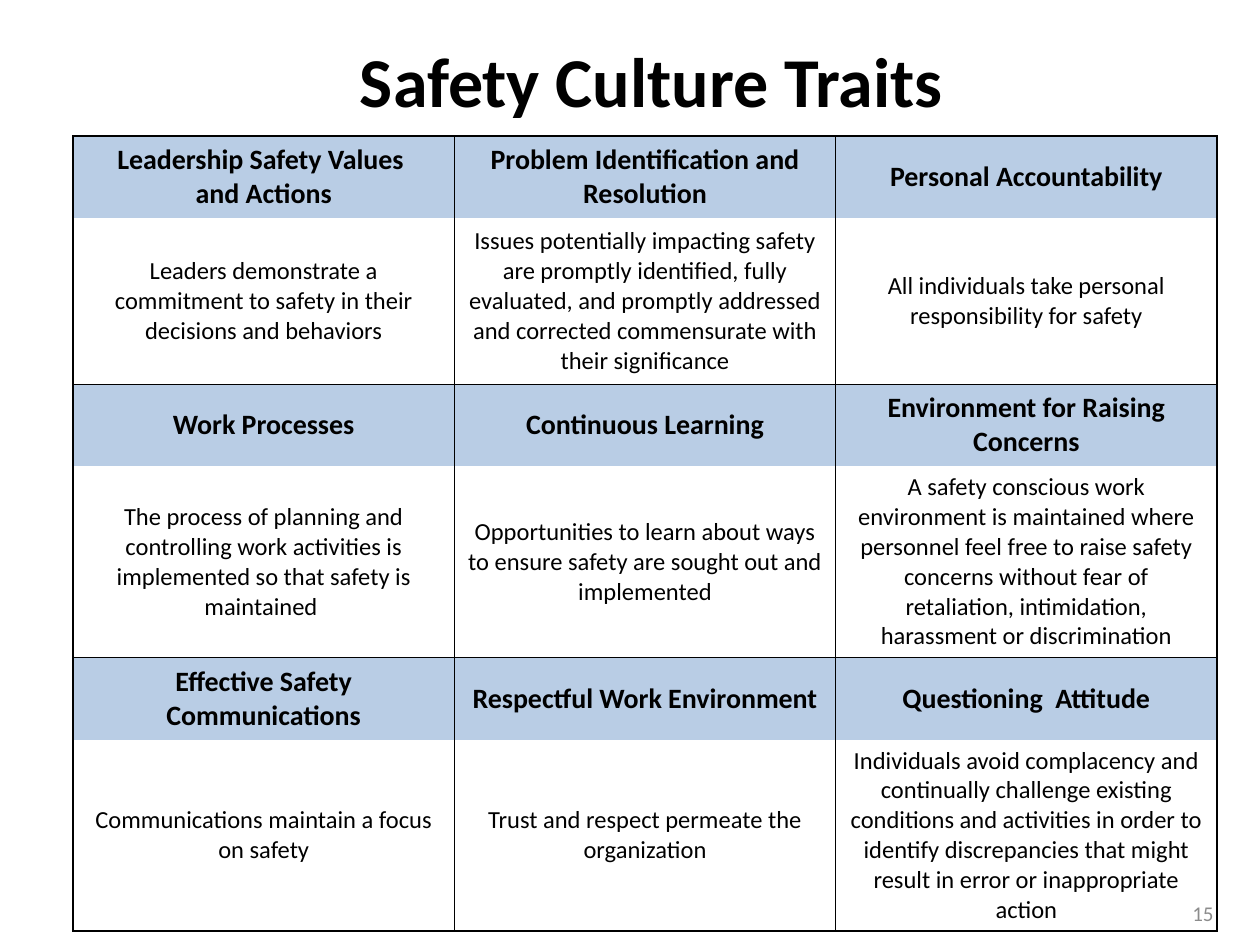
"""Build the Safety Culture Traits slide."""
from lxml import etree
from pptx import Presentation
from pptx.dml.color import RGBColor
from pptx.enum import text as t
from pptx.oxml import ns
from pptx.util import Inches, Pt

BLACK = RGBColor(0, 0, 0)
GRAY = RGBColor(0x8C, 0x8C, 0x8C)
BLUE = RGBColor(0xB9, 0xCD, 0xE5)
CENTER, RIGHT = t.PP_ALIGN.CENTER, t.PP_ALIGN.RIGHT
MIDDLE, TOP = t.MSO_ANCHOR.MIDDLE, t.MSO_ANCHOR.TOP


def write(frame, lines, size, bold=False, color=BLACK, align=CENTER):
    frame.word_wrap = True
    for i, line in enumerate(lines.split("\n")):
        para = frame.add_paragraph() if i else frame.paragraphs[0]
        para.alignment = align
        run = para.add_run()
        run.text = line
        run.font.name = "Calibri"
        run.font.size = Pt(size)
        run.font.bold = bold
        run.font.color.rgb = color


def edge(cell, sides):
    props = cell._tc.get_or_add_tcPr()
    for i, side in enumerate("LRTB"):
        line = etree.Element(ns.qn("a:ln" + side), w=str(Pt(1)))
        if side in sides:
            fill = etree.SubElement(line, ns.qn("a:solidFill"))
            etree.SubElement(fill, ns.qn("a:srgbClr"), val=str(BLACK))
        else:
            etree.SubElement(line, ns.qn("a:noFill"))
        props.insert(i, line)


traits = [
    [("Leadership Safety Values \nand Actions",
      "Leaders demonstrate a commitment to safety in their decisions and behaviors"),
     ("Problem Identification and Resolution",
      "Issues potentially impacting safety are promptly identified, fully evaluated, "
      "and promptly addressed and corrected commensurate with their significance"),
     ("Personal Accountability",
      "All individuals take personal responsibility for safety")],
    [("Work Processes",
      "The process of planning and controlling work activities is implemented "
      "so that safety is maintained "),
     ("Continuous Learning",
      "Opportunities to learn about ways to ensure safety are sought out and implemented"),
     ("Environment for Raising Concerns",
      "A safety conscious work environment is maintained where personnel feel free to "
      "raise safety concerns without fear of retaliation, intimidation, harassment "
      "or discrimination")],
    [("Effective Safety Communications",
      "Communications maintain a focus on safety"),
     ("Respectful Work Environment",
      "Trust and respect permeate the organization"),
     ("Questioning  Attitude",
      "Individuals avoid complacency and continually challenge existing conditions and "
      "activities in order to identify discrepancies that might result in error or "
      "inappropriate action")],
]

deck = Presentation()
deck.slide_width, deck.slide_height = Inches(10), Inches(7.5)
slide = deck.slides.add_slide(deck.slide_layouts[6])

page = slide.shapes.add_textbox(Inches(9.02), Inches(7.08), Inches(0.71), Inches(0.33))
page.text_frame.vertical_anchor = MIDDLE
write(page.text_frame, "15", 12, color=GRAY, align=RIGHT)

title = slide.shapes.add_textbox(Inches(1.92), Inches(0.25), Inches(6.5), Inches(0.75))
title.text_frame.vertical_anchor = TOP
write(title.text_frame, "Safety Culture Traits", 40, True)

highs = [0.65, 1.32, 0.65, 1.52, 0.65, 1.52]
grid = slide.shapes.add_table(6, 3, Inches(0.58), Inches(1.08),
                              Inches(9.08), Inches(sum(highs))).table
grid.first_row = grid.horz_banding = False
for col in grid.columns:
    col.width = Inches(9.08 / 3)
for row, high in zip(grid.rows, highs):
    row.height = Inches(high)

for r, band in enumerate(traits):
    for c, pair in enumerate(band):
        for part, words in enumerate(pair):
            cell = grid.cell(2 * r + part, c)
            cell.vertical_anchor = MIDDLE
            if part:
                cell.fill.background()
                write(cell.text_frame, words, 14)
                edge(cell, "LRB")
            else:
                cell.fill.solid()
                cell.fill.fore_color.rgb = BLUE
                write(cell.text_frame, words, 16, True)
                edge(cell, "LRT")

deck.save("out.pptx")
